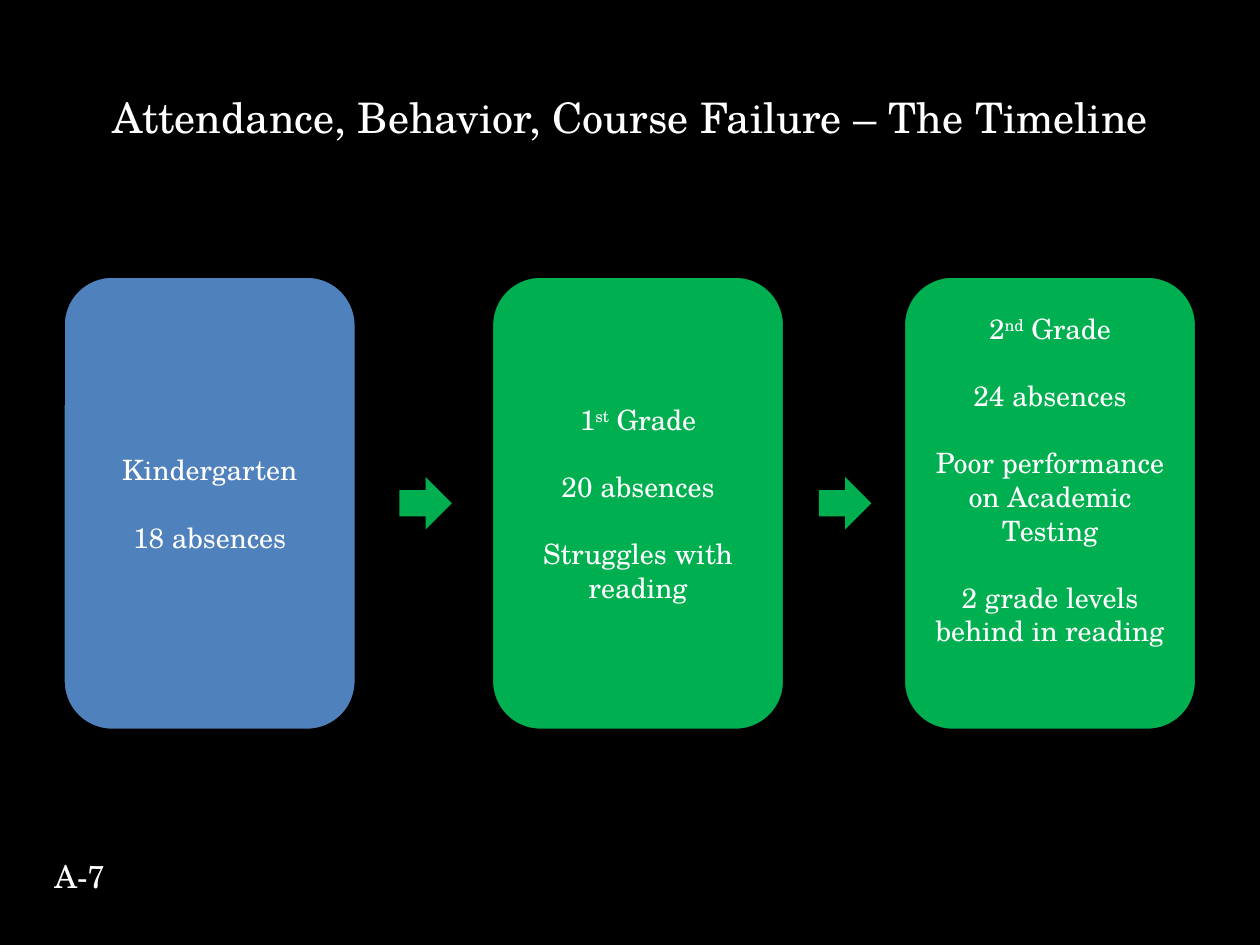
from pptx import Presentation
from pptx.dml.color import RGBColor
from pptx.enum import shapes, text
from pptx.util import Pt

FONT = "TeX Gyre Schola"
BLACK = RGBColor(0x00, 0x00, 0x00)
WHITE = RGBColor(0xFF, 0xFF, 0xFF)
BLUE = RGBColor(0x4F, 0x81, 0xBD)
GREEN = RGBColor(0x00, 0xB0, 0x50)

TITLE = "Attendance, Behavior, Course Failure – The Timeline"
PAGE_LABEL = "A-7"
# left edge, fill, bottom inset, paragraphs; a tuple holds base, superscript, rest
GRADES = [
    (36, BLUE, 3.6, ["Kindergarten", "18 absences"]),
    (280.8, GREEN, 3.6, [("1", "st", " Grade"), "20 absences",
                         "Struggles with reading"]),
    (516.2, GREEN, 30.6, [("2", "nd", " Grade"), "24 absences",
                          "Poor performance on Academic Testing",
                          "2 grade levels behind in reading"]),
]
ARROW_LEFTS = [228.2, 468]

CARD_TOP, CARD_WIDTH, CARD_HEIGHT = 157.8, 167.6, 259.6
ARROW_SIZE = 30
PARAGRAPH_GAP = 19.2

deck = Presentation()
deck.slide_width, deck.slide_height = Pt(720), Pt(540)
slide = deck.slides.add_slide(deck.slide_layouts[6])
slide.background.fill.solid()
slide.background.fill.fore_color.rgb = BLACK


def write(paragraph, content, size, align):
    """Fill a paragraph; the second part of a tuple is superscript."""
    parts = (content,) if isinstance(content, str) else content
    for index, part in enumerate(parts):
        run = paragraph.add_run()
        run.text = part
        if index == 1:
            run.font._element.set("baseline", "30000")
    paragraph.alignment = align
    font = paragraph.font
    font.name, font.size, font.color.rgb = FONT, Pt(size), WHITE


def add_label(content, left, top, width, height, size, align, anchor):
    frame = slide.shapes.add_textbox(
        Pt(left), Pt(top), Pt(width), Pt(height)).text_frame
    frame.word_wrap = True
    frame.vertical_anchor = anchor
    write(frame.paragraphs[0], content, size, align)


def add_filled(preset, left, top, width, height, color):
    shape = slide.shapes.add_shape(
        preset, Pt(left), Pt(top), Pt(width), Pt(height))
    shape.shadow.inherit = False
    shape.fill.solid()
    shape.fill.fore_color.rgb = color
    shape.line.fill.background()
    return shape


add_label(TITLE, 36, 21.6, 648, 90, 24,
          text.PP_ALIGN.CENTER, text.MSO_ANCHOR.MIDDLE)

for left, color, bottom_inset, paragraphs in GRADES:
    card = add_filled(shapes.MSO_SHAPE.ROUNDED_RECTANGLE,
                      left, CARD_TOP, CARD_WIDTH, CARD_HEIGHT, color)
    card.line.color.rgb = BLACK
    card.line.width = Pt(2)
    frame = card.text_frame
    frame.word_wrap = True
    frame.vertical_anchor = text.MSO_ANCHOR.MIDDLE
    frame.margin_bottom = Pt(bottom_inset)
    for index, content in enumerate(paragraphs):
        paragraph = frame.add_paragraph() if index else frame.paragraphs[0]
        write(paragraph, content, 16, text.PP_ALIGN.CENTER)
        if index:
            paragraph.space_before = Pt(PARAGRAPH_GAP)

arrow_top = CARD_TOP + (CARD_HEIGHT - ARROW_SIZE) / 2
for left in ARROW_LEFTS:
    add_filled(shapes.MSO_SHAPE.RIGHT_ARROW,
               left, arrow_top, ARROW_SIZE, ARROW_SIZE, GREEN)

add_label(PAGE_LABEL, 24, 486, 48, 29, 18,
          text.PP_ALIGN.LEFT, text.MSO_ANCHOR.TOP)

deck.save("out.pptx")
